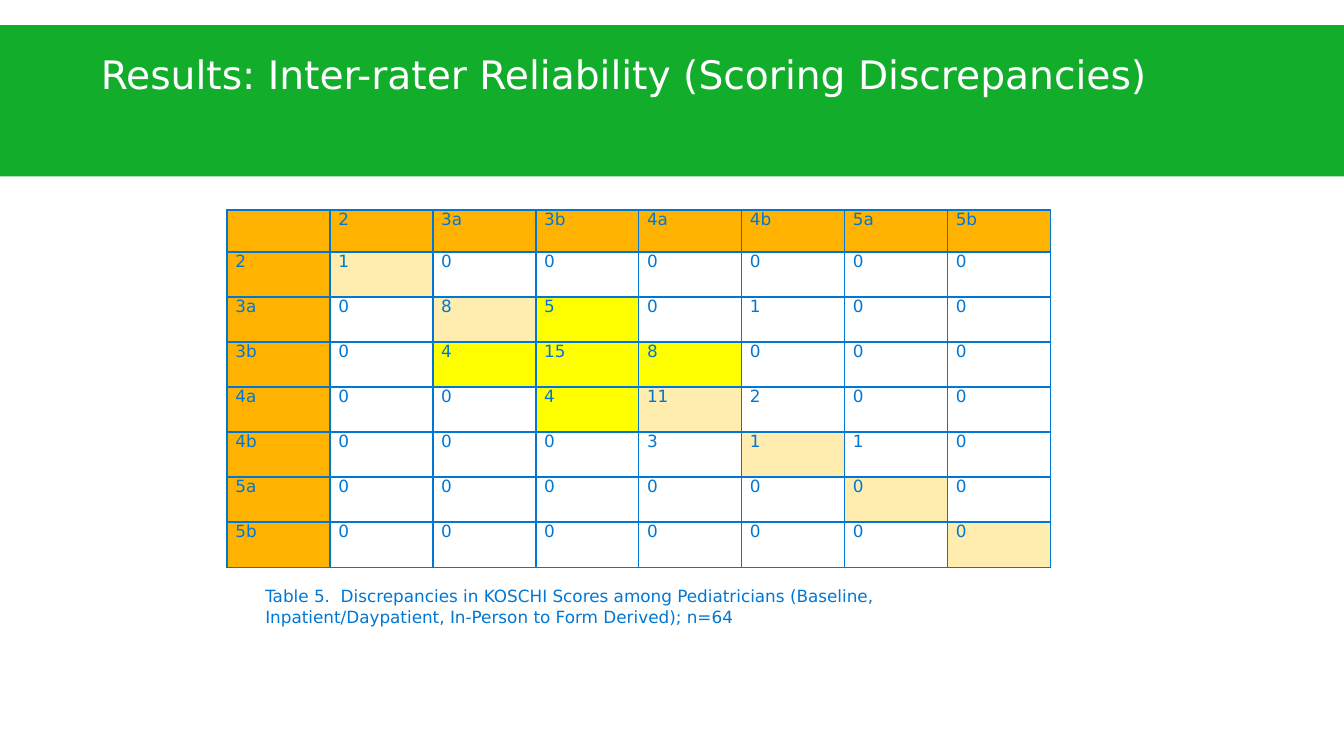
import dataclasses

import pptx
import pptx.dml.color
import pptx.enum.shapes
import pptx.enum.text
import pptx.oxml
import pptx.oxml.ns
import pptx.table
import pptx.text.text
import pptx.util

Pt = pptx.util.Pt
FONT = "DejaVu Sans"
GREEN, WHITE, BLUE = "12AD2A", "FFFFFF", "0077D4"
ORANGE, CREAM, YELLOW = "FFB300", "FFECAF", "FFFF00"

GRADES = ["2", "3a", "3b", "4a", "4b", "5a", "5b"]
COUNTS = [
    [1, 0, 0, 0, 0, 0, 0],
    [0, 8, 5, 0, 1, 0, 0],
    [0, 4, 15, 8, 0, 0, 0],
    [0, 0, 4, 11, 2, 0, 0],
    [0, 0, 0, 3, 1, 1, 0],
    [0, 0, 0, 0, 0, 0, 0],
    [0, 0, 0, 0, 0, 0, 0],
]
# (row, column) of the grid, headings included
DISCREPANCIES = {(2, 3), (3, 2), (3, 3), (3, 4), (4, 3)}
COLUMN_WIDTH, HEADING_HEIGHT, ROW_HEIGHT = 55.15, 22.4, 24.17


@dataclasses.dataclass(frozen=True)
class GridCell:
    row: int
    column: int
    text: str

    @property
    def fill(self) -> str | None:
        if self.row == 0 or self.column == 0:
            return ORANGE
        if (self.row, self.column) in DISCREPANCIES:
            return YELLOW
        return CREAM if self.row == self.column else None


def colour(value: str) -> pptx.dml.color.RGBColor:
    return pptx.dml.color.RGBColor.from_string(value)


def apply_format(target: object, values: dict) -> None:
    for name, value in values.items():
        setattr(target, name, value)


def write(frame: pptx.text.text.TextFrame, text: str, size: float, hex_colour: str) -> None:
    paragraph = frame.paragraphs[0]
    paragraph.alignment = pptx.enum.text.PP_ALIGN.LEFT
    run = paragraph.add_run()
    run.text = text
    apply_format(run.font, {"name": FONT, "size": Pt(size), "bold": False})
    run.font.color.rgb = colour(hex_colour)


def add_borders(cell: pptx.table._Cell, hex_colour: str, width: float) -> None:
    properties = cell._tc.get_or_add_tcPr()
    for index, side in enumerate("LRTB"):
        properties.insert(index, pptx.oxml.parse_xml(
            f'<a:ln{side} {pptx.oxml.ns.nsdecls("a")} w="{Pt(width)}"><a:solidFill>'
            f'<a:srgbClr val="{hex_colour}"/></a:solidFill></a:ln{side}>'))


def draw_cell(table: pptx.table.Table, item: GridCell) -> None:
    cell = table.cell(item.row, item.column)
    apply_format(cell, {"margin_left": Pt(4.5), "margin_right": Pt(4.5),
                        "margin_top": 0, "margin_bottom": 0})
    if item.fill:
        cell.fill.solid()
        cell.fill.fore_color.rgb = colour(item.fill)
    else:
        cell.fill.background()
    add_borders(cell, BLUE, 1)
    if item.text:
        write(cell.text_frame, item.text, 9, BLUE)


def main() -> None:
    deck = pptx.Presentation()
    apply_format(deck, {"slide_width": Pt(720), "slide_height": Pt(405)})
    slide = deck.slides.add_slide(deck.slide_layouts[5])

    # Green band, placed behind the title
    band = slide.shapes.add_shape(pptx.enum.shapes.MSO_SHAPE.RECTANGLE,
                                  Pt(0), Pt(13.5), Pt(720), Pt(81))
    band.shadow.inherit = False
    band.fill.solid()
    band.fill.fore_color.rgb = colour(GREEN)
    band.line.fill.background()
    slide.shapes._spTree.insert(2, band._element)

    # Title
    title = slide.shapes.title
    apply_format(title, {"left": Pt(54), "top": Pt(27), "width": Pt(612), "height": Pt(67.5)})
    apply_format(title.text_frame, {
        "margin_left": 0, "margin_right": 0, "margin_top": 0, "margin_bottom": 0,
        "word_wrap": True,
        "vertical_anchor": pptx.enum.text.MSO_ANCHOR.TOP,
        "auto_size": pptx.enum.text.MSO_AUTO_SIZE.NONE,
    })
    write(title.text_frame, "Results: Inter-rater Reliability (Scoring Discrepancies)", 21, WHITE)

    # Score matrix
    grid = [["", *GRADES]]
    grid += [[grade, *map(str, counts)] for grade, counts in zip(GRADES, COUNTS)]
    size = len(grid)
    matrix = slide.shapes.add_table(
        size, size, Pt(121.6), Pt(112.5), Pt(COLUMN_WIDTH * size),
        Pt(HEADING_HEIGHT + ROW_HEIGHT * (size - 1))).table
    apply_format(matrix, {"first_row": False, "horz_banding": False})
    for column in matrix.columns:
        column.width = Pt(COLUMN_WIDTH)
    for index, row in enumerate(matrix.rows):
        row.height = Pt(ROW_HEIGHT if index else HEADING_HEIGHT)
    for row_index, texts in enumerate(grid):
        for column_index, text in enumerate(texts):
            draw_cell(matrix, GridCell(row_index, column_index, text))

    # Caption
    caption = slide.shapes.add_textbox(Pt(135), Pt(310.5), Pt(436.5), Pt(28.8)).text_frame
    apply_format(caption, {"word_wrap": True,
                           "auto_size": pptx.enum.text.MSO_AUTO_SIZE.SHAPE_TO_FIT_TEXT})
    write(caption, "Table 5.  Discrepancies in KOSCHI Scores among Pediatricians (Baseline, "
                   "Inpatient/Daypatient, In-Person to Form Derived); n=64", 9, BLUE)

    deck.save("out.pptx")


if __name__ == "__main__":
    main()
